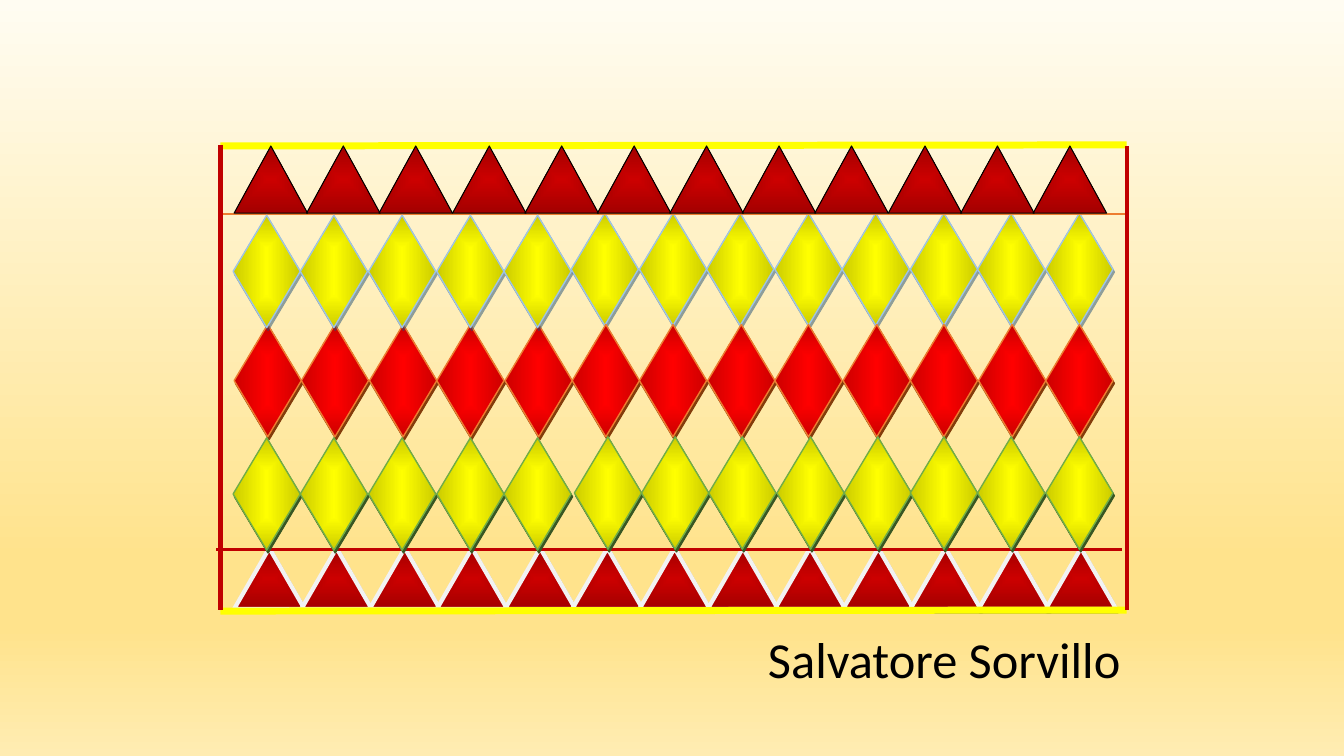
from dataclasses import dataclass
from typing import Optional

import pptx
import pptx.dml.color
import pptx.enum.shapes
import pptx.enum.text
import pptx.oxml
import pptx.oxml.ns
import pptx.util

EMU_PER_PX = 9525
A_NS = 'xmlns:a="http://schemas.openxmlformats.org/drawingml/2006/main"'
CENTRE_PATH = '<a:path path="shape"><a:fillToRect l="50000" t="50000" r="50000" b="50000"/></a:path>'
DOWNWARD = '<a:lin ang="5400000" scaled="0"/>'
TRIANGLE = pptx.enum.shapes.MSO_SHAPE.ISOSCELES_TRIANGLE
DIAMOND = pptx.enum.shapes.MSO_SHAPE.DIAMOND

Stops = tuple[tuple[int, str], ...]


@dataclass(frozen=True)
class Theme:
    background: Stops = ((0, "FFFCF2"), (74, "FFE38C"), (83, "FFE38C"), (100, "FFECB2"))
    maroon: Stops = ((0, "CC0000"), (100, "A30000"))
    yellow: Stops = ((0, "FFFF00"), (100, "CCCC00"))
    red: Stops = ((0, "FF0000"), (100, "CC0000"))
    bright: str = "FFFF00"
    crimson: str = "C00000"
    orange: str = "ED7D31"
    black: str = "000000"
    font: str = "Calibri"
    signature_size: int = 36


THEME = Theme()


@dataclass(frozen=True)
class Style:
    kind: pptx.enum.shapes.MSO_SHAPE
    width: int
    height: int
    fill: Stops
    line: str
    line_pt: float
    shadow: Optional[str] = None
    shadow_opacity: int = 100


@dataclass(frozen=True)
class Row:
    style: Style
    first_left: int
    last_left: int
    top: int
    count: int


@dataclass(frozen=True)
class Rule:
    x1: int
    y1: int
    x2: int
    y2: int
    color: str
    width_pt: float


TOP_TRIANGLE = Style(TRIANGLE, 70, 64, THEME.maroon, THEME.black, 0.75)
BOTTOM_TRIANGLE = Style(TRIANGLE, 67, 58, THEME.maroon, "F2F2F2", 3, "525252", 50)
BLUE_EDGED = Style(DIAMOND, 64, 107, THEME.yellow, "9DC3E6", 1, "1F4E79", 50)
ORANGE_EDGED = Style(DIAMOND, 64, 107, THEME.red, THEME.orange, 1, "843C0B")
GREEN_EDGED = Style(DIAMOND, 64, 107, THEME.yellow, "70AD47", 1, "385723")

PATTERN: tuple[Row | Rule, ...] = (
    Rule(210, 139, 1073, 138, THEME.bright, 5),
    Row(BOTTOM_TRIANGLE, 223, 996, 522, 13),
    Rule(210, 582, 1073, 581, THEME.bright, 5),
    Rule(206, 523, 1069, 523, THEME.crimson, 2.25),
    Row(BLUE_EDGED, 544, 996, 203, 8),
    Row(ORANGE_EDGED, 223, 996, 309, 13),
    Row(GREEN_EDGED, 222, 480, 417, 5),
    Row(GREEN_EDGED, 547, 804, 416, 5),
    Row(GREEN_EDGED, 867, 996, 416, 3),
    Rule(210, 204, 1073, 204, THEME.orange, 1.5),
    Rule(1073, 581, 1073, 139, THEME.crimson, 3),
    Rule(210, 138, 210, 581, THEME.crimson, 3),
    Row(TOP_TRIANGLE, 223, 984, 139, 12),
    Row(BLUE_EDGED, 222, 480, 205, 5),
)


def px(value: int) -> pptx.util.Emu:
    return pptx.util.Emu(value * EMU_PER_PX)


def rgb(color: str) -> pptx.dml.color.RGBColor:
    return pptx.dml.color.RGBColor.from_string(color)


def set_gradient(fill, element, stops: Stops, direction: str) -> None:
    fill.gradient()
    old = next(element.iter(pptx.oxml.ns.qn("a:gradFill")))
    marks = "".join(
        f'<a:gs pos="{pos * 1000}"><a:srgbClr val="{color}"/></a:gs>' for pos, color in stops
    )
    new = pptx.oxml.parse_xml(
        f'<a:gradFill {A_NS} rotWithShape="1"><a:gsLst>{marks}</a:gsLst>{direction}</a:gradFill>'
    )
    old.getparent().replace(old, new)


def add_shadow(sp, color: str, opacity: int) -> None:
    effects = sp._element.spPr.find(pptx.oxml.ns.qn("a:effectLst"))
    effects.append(pptx.oxml.parse_xml(
        f'<a:outerShdw {A_NS} dist="28398" dir="3806097" algn="ctr" rotWithShape="0">'
        f'<a:srgbClr val="{color}"><a:alpha val="{opacity * 1000}"/></a:srgbClr></a:outerShdw>'
    ))


def draw_row(shapes, row: Row) -> None:
    style = row.style
    pitch = (row.last_left - row.first_left) / (row.count - 1)
    for i in range(row.count):
        left = row.first_left + round(i * pitch)
        sp = shapes.add_shape(style.kind, px(left), px(row.top), px(style.width), px(style.height))
        set_gradient(sp.fill, sp._element, style.fill, CENTRE_PATH)
        sp.line.color.rgb = rgb(style.line)
        sp.line.width = pptx.util.Pt(style.line_pt)
        sp.shadow.inherit = False
        if style.shadow:
            add_shadow(sp, style.shadow, style.shadow_opacity)


def draw_rule(shapes, rule: Rule) -> None:
    line = shapes.add_connector(
        pptx.enum.shapes.MSO_CONNECTOR.STRAIGHT,
        px(rule.x1), px(rule.y1), px(rule.x2), px(rule.y2),
    )
    line.line.color.rgb = rgb(rule.color)
    line.line.width = pptx.util.Pt(rule.width_pt)
    line._element.spPr.append(pptx.oxml.parse_xml(f"<a:effectLst {A_NS}/>"))


def draw_signature(shapes) -> None:
    tf = shapes.add_textbox(px(722), px(593), px(424), px(68)).text_frame
    tf.word_wrap = True
    tf.auto_size = pptx.enum.text.MSO_AUTO_SIZE.SHAPE_TO_FIT_TEXT
    p = tf.paragraphs[0]
    p.text = "Salvatore Sorvillo"
    p.font.name = THEME.font
    p.font.size = pptx.util.Pt(THEME.signature_size)
    p.font.color.rgb = rgb(THEME.black)


def main() -> None:
    prs = pptx.Presentation()
    prs.slide_width, prs.slide_height = px(1280), px(720)
    s = prs.slides.add_slide(prs.slide_layouts[6])
    set_gradient(s.background.fill, s._element, THEME.background, DOWNWARD)
    group = s.shapes.add_group_shape()
    for item in PATTERN:
        if isinstance(item, Row):
            draw_row(group.shapes, item)
        else:
            draw_rule(group.shapes, item)
    draw_signature(s.shapes)
    prs.save("out.pptx")


if __name__ == "__main__":
    main()
